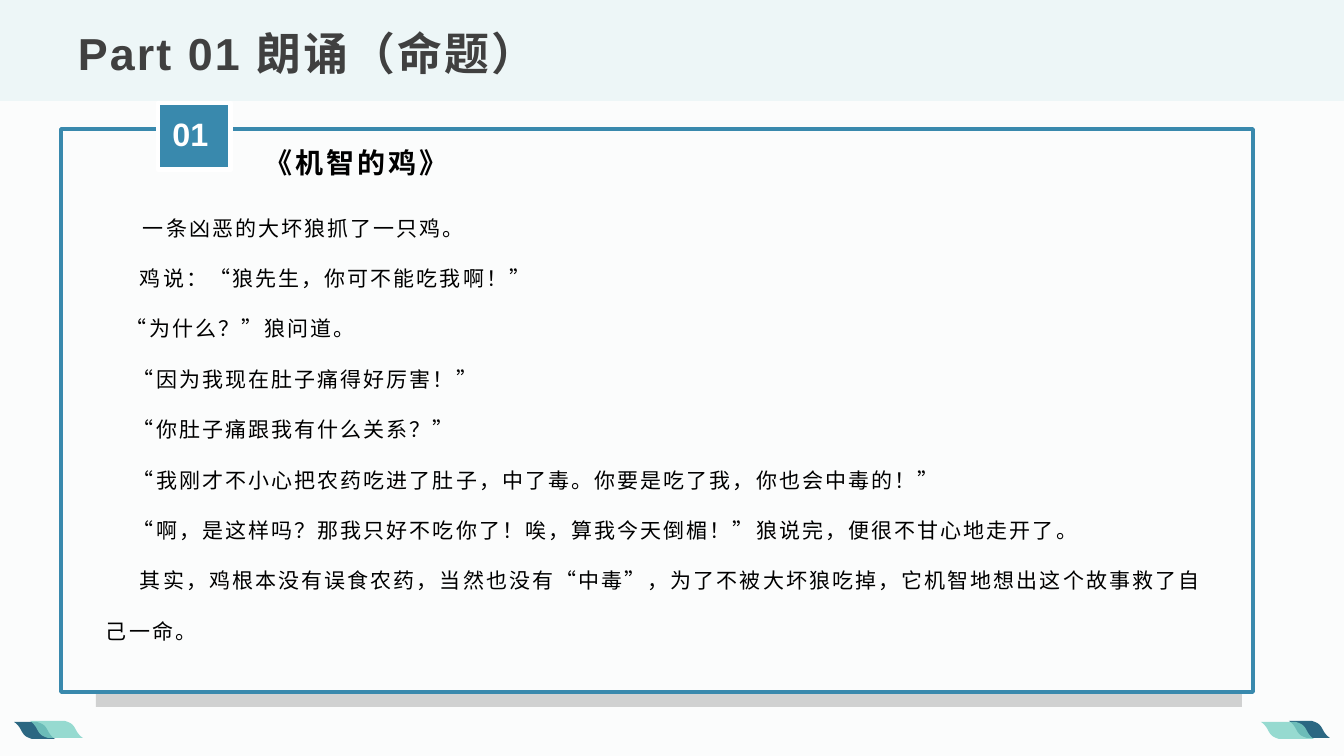
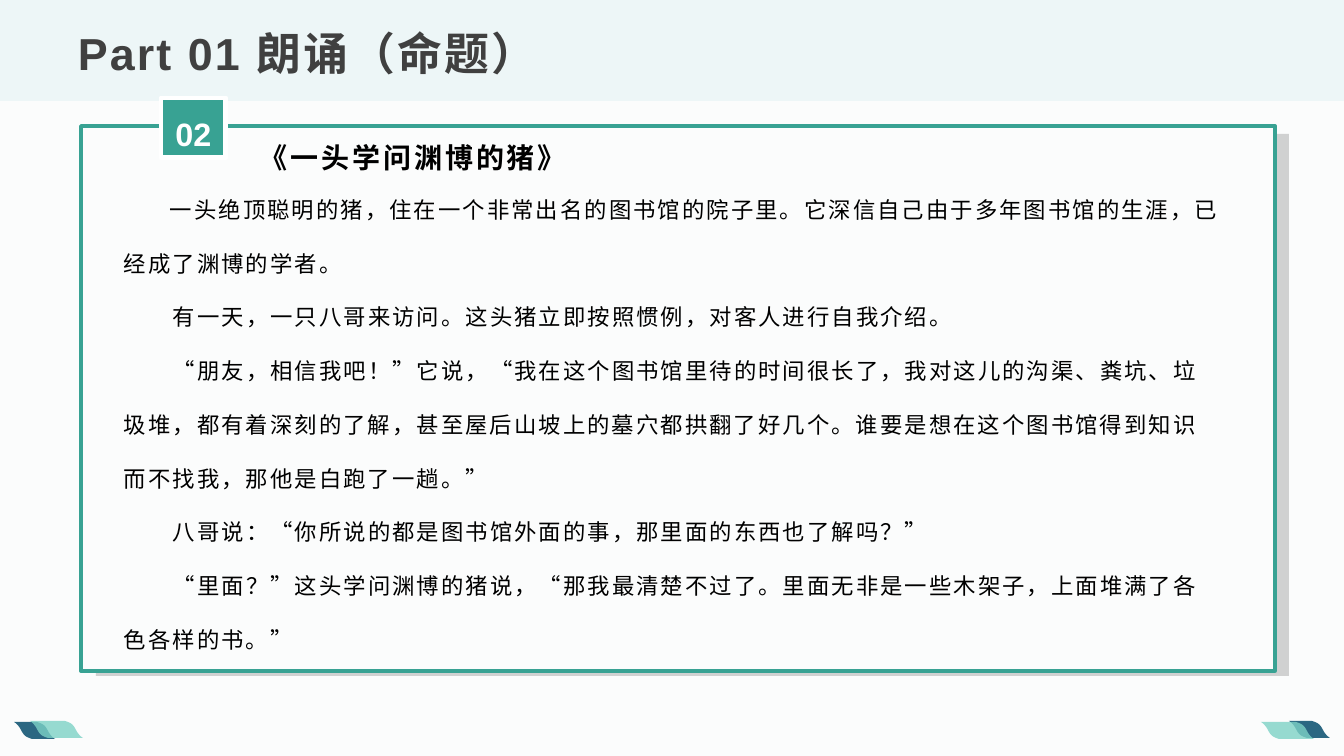
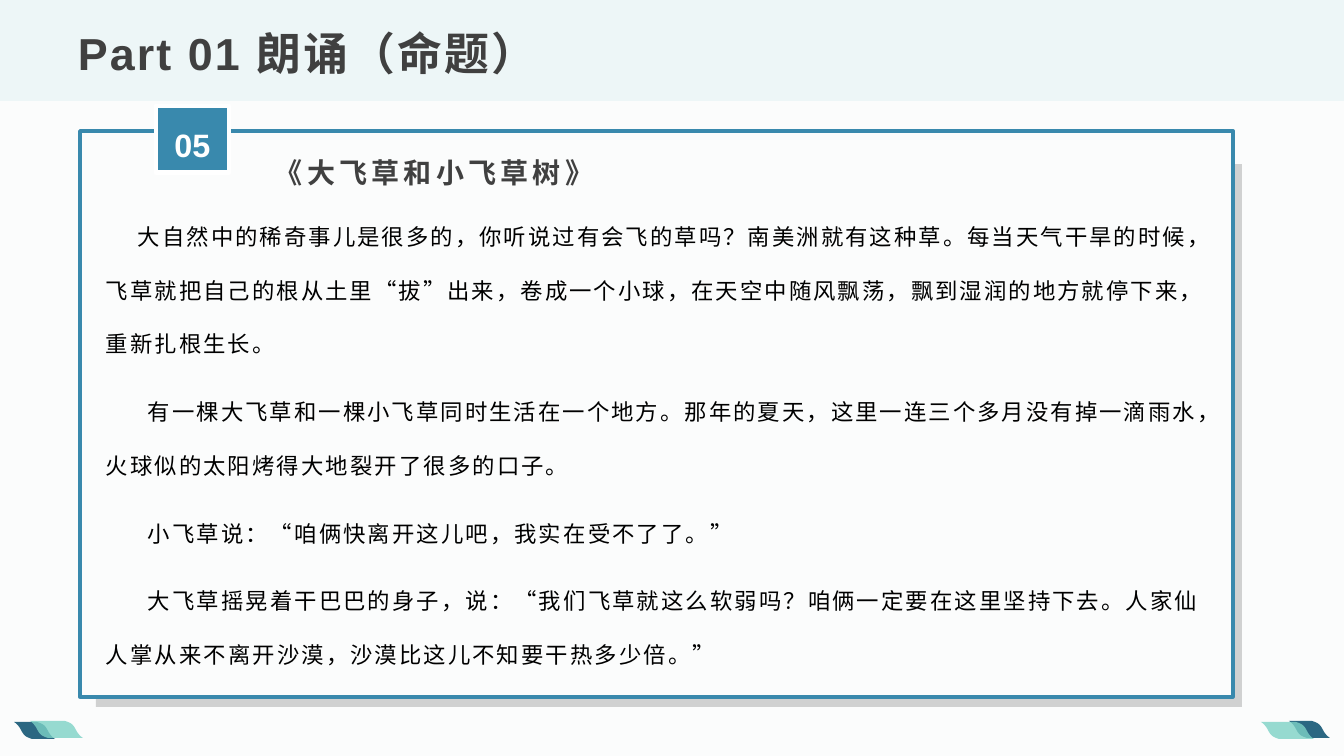
from dataclasses import dataclass

from lxml import etree
from pptx import Presentation
from pptx.dml.color import RGBColor
from pptx.enum.shapes import MSO_SHAPE
from pptx.enum.text import MSO_ANCHOR, PP_ALIGN
from pptx.oxml.ns import qn
from pptx.util import Emu, Pt

RECT = MSO_SHAPE.RECTANGLE
TOP, BOTTOM = MSO_ANCHOR.TOP, MSO_ANCHOR.BOTTOM
LEFT, CENTER = PP_ALIGN.LEFT, PP_ALIGN.CENTER
SCALE = 914400 / 100.8  # EMU in one px
WIDE, HIGH = 1344, 756


@dataclass(frozen=True)
class Theme:
    paper: str = "FBFCFC"
    band: str = "EDF6F7"
    shade: str = "BFBFBF"
    white: str = "FFFFFF"
    ink: str = "000000"
    gray: str = "404040"
    blue: str = "3989AD"
    green: str = "38A293"
    navy: str = "2B6782"
    mint: str = "7DD2C6"
    latin: str = "Arial"
    han: str = "Noto Sans CJK SC"
    title: float = 32
    head: float = 20
    badge: float = 23.1
    frame: float = 2.5
    rim: float = 3.5


T = Theme()
TITLE = "Part 01 朗诵（命题）"

# Boxes are left, top, width, height; each body line is first-line indent, text.
STORIES = [
    dict(
        hue=T.blue, shade=(96, 164, 1146, 543), card=(61, 129, 1192, 563),
        badge=(158, 103, 73, 67), label=(161, 105, 59, 77), number="01",
        head=(237, 126, 454, 53), name="《机智的鸡》", lead=18,
        look=dict(face=T.han, color=T.ink, track=2),
        body=(96, 190, 1123, 496), size=15, face=T.han, after=0,
        lines=[
            (37, "一条凶恶的大坏狼抓了一只鸡。"),
            (34, "鸡说：“狼先生，你可不能吃我啊！”"),
            (20, "“为什么？”狼问道。"),
            (27, "“因为我现在肚子痛得好厉害！”"),
            (27, "“你肚子痛跟我有什么关系？”"),
            (27, "“我刚才不小心把农药吃进了肚子，中了毒。你要是吃了我，你也会中毒的！”"),
            (27, "“啊，是这样吗？那我只好不吃你了！唉，算我今天倒楣！”狼说完，便很不甘心地走开了。"),
            (34, "其实，鸡根本没有误食农药，当然也没有“中毒”，为了不被大坏狼吃掉，它机智地想出这个故事救了自己一命。"),
        ],
    ),
    dict(
        hue=T.green, shade=(96, 134, 1193, 542), card=(81, 126, 1194, 545),
        badge=(161, 98, 65, 60), label=(164, 105, 59, 65), number="02",
        head=(232, 117, 454, 57), name="《一头学问渊博的猪》", lead=18,
        look=dict(face=T.han, color=T.ink, track=2),
        body=(114, 169, 1120, 494), size=16, face=T.latin, after=0,
        lines=[
            (46, "一头绝顶聪明的猪，住在一个非常出名的图书馆的院子里。它深信自己由于多年图书馆的生涯，已经成了渊博的学者。"),
            (49, "有一天，一只八哥来访问。这头猪立即按照惯例，对客人进行自我介绍。"),
            (49, "“朋友，相信我吧！”它说，“我在这个图书馆里待的时间很长了，我对这儿的沟渠、粪坑、垃圾堆，都有着深刻的了解，甚至屋后山坡上的墓穴都拱翻了好几个。谁要是想在这个图书馆得到知识而不找我，那他是白跑了一趟。”"),
            (49, "八哥说：“你所说的都是图书馆外面的事，那里面的东西也了解吗？”"),
            (49, "“里面？”这头学问渊博的猪说，“那我最清楚不过了。里面无非是一些木架子，上面堆满了各色各样的书。”"),
        ],
    ),
    dict(
        hue=T.blue, shade=(96, 164, 1146, 543), card=(80, 131, 1153, 566),
        badge=(156, 106, 73, 67), label=(163, 116, 59, 65), number="05",
        head=(229, 139, 454, 50), name="《大飞草和小飞草树》", lead=36,
        look=dict(face=T.latin, color=T.gray, track=3),
        body=(96, 196, 1122, 485), size=16, face=T.latin, after=10,
        lines=[
            (32, "大自然中的稀奇事儿是很多的，你听说过有会飞的草吗？南美洲就有这种草。每当天气干旱的时候，飞草就把自己的根从土里“拔”出来，卷成一个小球，在天空中随风飘荡，飘到湿润的地方就停下来，重新扎根生长。"),
            (42, "有一棵大飞草和一棵小飞草同时生活在一个地方。那年的夏天，这里一连三个多月没有掉一滴雨水，火球似的太阳烤得大地裂开了很多的口子。"),
            (42, "小飞草说：“咱俩快离开这儿吧，我实在受不了了。”"),
            (42, "大飞草摇晃着干巴巴的身子，说：“我们飞草就这么软弱吗？咱俩一定要在这里坚持下去。人家仙人掌从来不离开沙漠，沙漠比这儿不知要干热多少倍。”"),
        ],
    ),
]

# Leaves: left, top, width, colour, opacity in percent.
LEAVES = [(14, 722, 41, T.navy, 100), (30, 721, 53, T.mint, 80)]
LEAF_HIGH = 17
# One side of a leaf as two cubic curves, measured from its top left tip.
SIDE = [[(0, 0), (0, 0), (4, 2), (7, 8)], [(7, 8), (10, 14), (12, 15), (18, 17)]]


def px(n):
    return Emu(round(n * SCALE))


def rgb(code):
    return RGBColor.from_string(code)


def paint(shape, fill, alpha=100, line=None, weight=0):
    shape.shadow.inherit = False
    shape.fill.solid()
    shape.fill.fore_color.rgb = rgb(fill)
    if alpha < 100:
        color = shape._element.spPr.find(qn("a:solidFill")).find(qn("a:srgbClr"))
        etree.SubElement(color, qn("a:alpha")).set("val", str(alpha * 1000))
    if line:
        shape.line.color.rgb = rgb(line)
        shape.line.width = Pt(weight)
    else:
        shape.line.fill.background()


def block(slide, box, fill, **look):
    paint(slide.shapes.add_shape(RECT, *map(px, box)), fill, **look)


def write(slide, box, lines, size, face=T.latin, color=T.ink, bold=False, track=0,
          space=1.0, after=0, align=LEFT, anchor=TOP, pad=(5, 5)):
    """Add a text box; lines holds (first-line indent, text) pairs."""
    frame = slide.shapes.add_textbox(*map(px, box)).text_frame
    frame.word_wrap = True
    frame.vertical_anchor = anchor
    frame.margin_left = frame.margin_right = px(10)
    frame.margin_top, frame.margin_bottom = map(px, pad)
    for i, (indent, text) in enumerate(lines):
        para = frame.paragraphs[0] if i == 0 else frame.add_paragraph()
        para.alignment = align
        para.line_spacing = space
        para.space_after = Pt(after)
        props = para._p.get_or_add_pPr()
        props.set("indent", str(px(indent)))
        props.set("hangingPunct", "1")
        run = para.add_run()
        run.text = text
        font = run.font
        font.size, font.bold, font.name = Pt(size), bold, face
        font.color.rgb = rgb(color)
        mark = run._r.get_or_add_rPr()
        mark.set("lang", "zh-CN")
        mark.set("spc", str(round(track * 100)))
        etree.SubElement(mark, qn("a:ea")).set("typeface", T.han)


def curve(a, b, c, d, steps=8):
    """Points along a cubic curve."""
    for i in range(steps + 1):
        t = i / steps
        u = 1 - t
        yield tuple(u**3 * p + 3 * u * u * t * q + 3 * u * t * t * r + t**3 * s
                    for p, q, r, s in zip(a, b, c, d))


def leaf(slide, left, top, width, fill, alpha, turn):
    """Draw a leaf at lower left, or turned half round at lower right."""
    side = [point for part in SIDE for point in curve(*part)]
    ring = side + [(width - x, LEAF_HIGH - y) for x, y in side]
    ring = [(left + x, top + y) for x, y in ring]
    if turn:
        ring = [(WIDE - x, 1460 - y) for x, y in ring]
    first, *rest = [(px(x), px(y)) for x, y in ring]
    pen = slide.shapes.build_freeform(*first, scale=1.0)
    pen.add_line_segments(rest, close=True)
    paint(pen.convert_to_shape(), fill, alpha)


def base(deck):
    """Add a slide with the band, title and corner leaves."""
    slide = deck.slides.add_slide(deck.slide_layouts[6])
    block(slide, (0, 0, WIDE, 101), T.band)
    for turn in (False, True):
        for item in LEAVES:
            leaf(slide, *item, turn)
    write(slide, (68, 17, 1210, 68), [(0, TITLE)], T.title, color=T.gray,
          bold=True, track=1.5, space=0.9, anchor=BOTTOM)
    return slide


def tell(deck, story):
    slide = base(deck)
    hue = story["hue"]
    block(slide, story["shade"], T.shade, alpha=70)
    block(slide, story["card"], T.paper, line=hue, weight=T.frame)
    block(slide, story["badge"], hue, line=T.white, weight=T.rim)
    write(slide, story["label"], [(0, story["number"])], T.badge, color=T.white,
          bold=True, space=1.1, align=CENTER)
    size = story["size"]
    write(slide, story["body"], story["lines"], size, face=story["face"], track=1.5,
          space=Pt(size * 2.4), after=story["after"], pad=(0, 5))
    write(slide, story["head"], [(story["lead"], story["name"])], T.head, bold=True,
          space=1.2, anchor=BOTTOM, pad=(5, 0), **story["look"])


def main():
    deck = Presentation()
    deck.slide_width, deck.slide_height = px(WIDE), px(HIGH)
    back = deck.slide_master.background.fill
    back.solid()
    back.fore_color.rgb = rgb(T.paper)
    for story in STORIES:
        tell(deck, story)
    deck.save("out.pptx")


if __name__ == "__main__":
    main()
